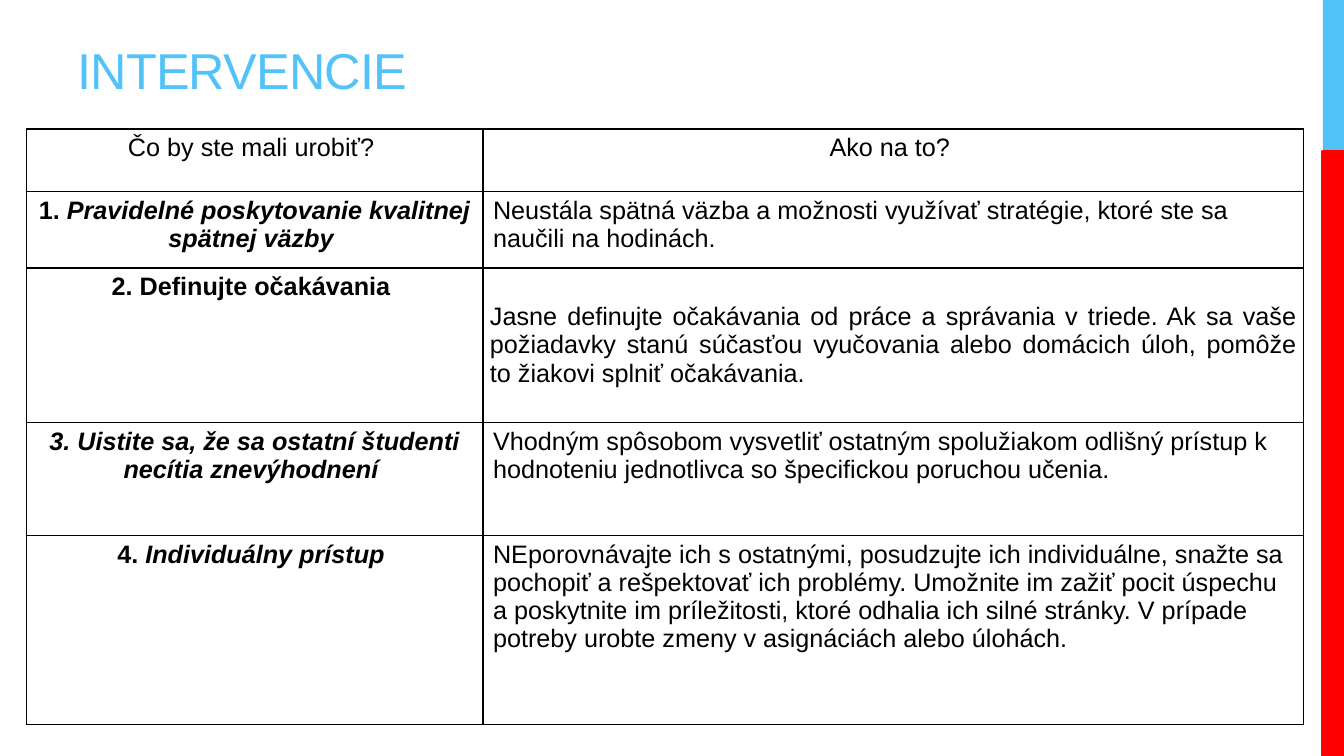
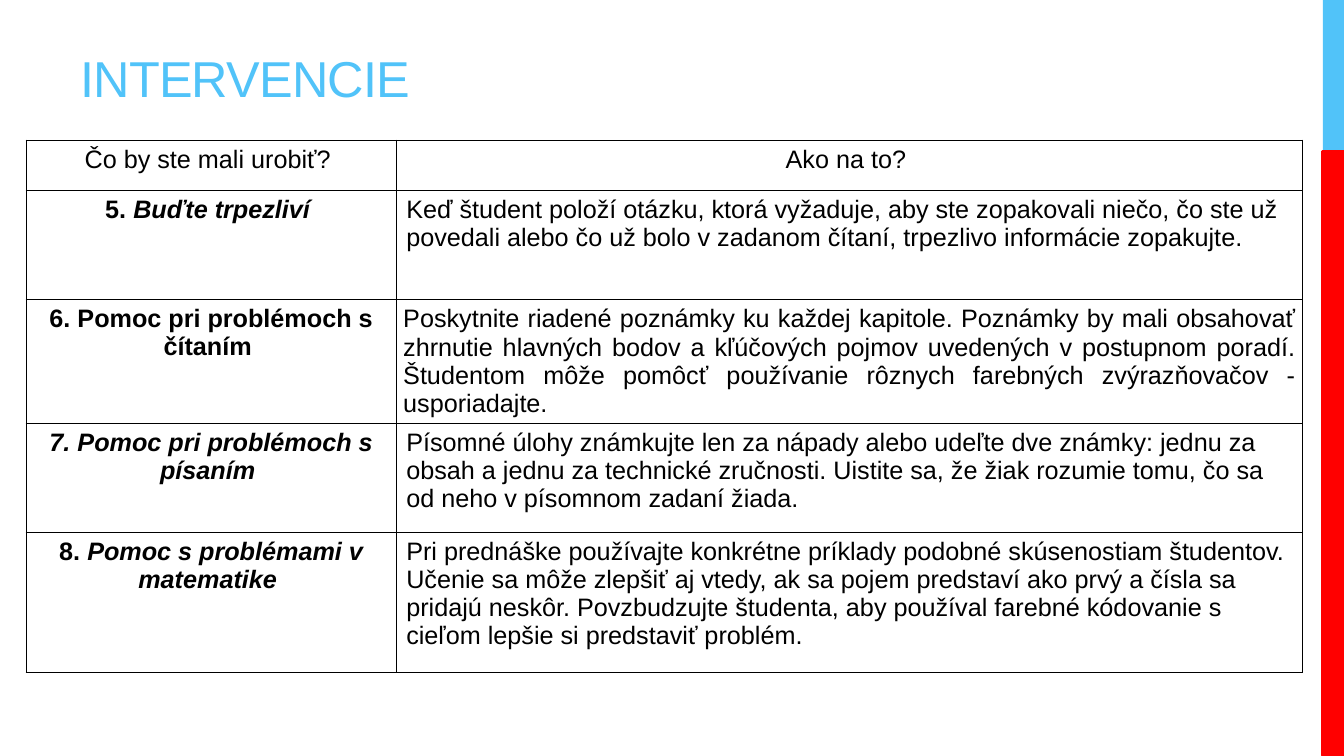
from lxml import etree
from pptx import Presentation
from pptx.dml.color import RGBColor
from pptx.enum import shapes, text
from pptx.oxml import ns
from pptx.util import Inches, Pt

HUES = {"sky": "51C3F9", "red": "FF0000", "ink": "000000", "page": "FFFFFF"}
FONT = "Arial"
WIDE, HIGH = 13.33, 7.5
HEADS = ("Čo by ste mali urobiť? ", "Ako na to? ")

FIRST = {
    "title": (0.67, 0.21, 8.44, 0.83),
    "grid": (0.26, 1.28),
    "cols": (4.53, 8.14),
    "rows": (0.62, 0.76, 1.53, 1.12, 1.88),
    "steps": [
        ([("1. ", False), ("Pravidelné poskytovanie kvalitnej spätnej väzby ", True)],
         "Neustála spätná väzba a možnosti využívať stratégie, ktoré ste sa naučili na hodinách."),
        ([("2. Definujte očakávania ", False)],
         "Jasne definujte očakávania od práce a správania v triede. Ak sa vaše požiadavky "
         "stanú súčasťou vyučovania alebo domácich úloh, pomôže to žiakovi splniť očakávania. "),
        ([("3. Uistite sa, že sa ostatní študenti necítia znevýhodnení ", True)],
         "Vhodným spôsobom vysvetliť ostatným spolužiakom odlišný prístup k hodnoteniu "
         "jednotlivca so špecifickou poruchou učenia."),
        ([("4. ", False), ("Individuálny prístup ", True)],
         "NEporovnávajte ich s ostatnými, posudzujte ich individuálne, snažte sa pochopiť "
         "a rešpektovať ich problémy. Umožnite im zažiť pocit úspechu a poskytnite im "
         "príležitosti, ktoré odhalia ich silné stránky. V prípade potreby urobte zmeny "
         "v asignáciách alebo úlohách."),
    ],
}

SECOND = {
    "title": (0.7, 0.21, 8.44, 0.91),
    "grid": (0.26, 1.39),
    "cols": (3.67, 8.99),
    "rows": (0.5, 1.08, 1.23, 1.08, 1.39),
    "steps": [
        ([("5. ", False), ("Buďte trpezliví ", True)],
         "Keď študent položí otázku, ktorá vyžaduje, aby ste zopakovali niečo, čo ste už "
         "povedali alebo čo už bolo v zadanom čítaní, trpezlivo informácie zopakujte."),
        ([("6. Pomoc pri problémoch s čítaním ", False)],
         "Poskytnite riadené poznámky ku každej kapitole. Poznámky by mali obsahovať "
         "zhrnutie hlavných bodov a kľúčových pojmov uvedených v postupnom poradí. "
         "Študentom môže pomôcť používanie rôznych farebných zvýrazňovačov - usporiadajte."),
        ([("7. Pomoc pri problémoch s písaním ", True)],
         "Písomné úlohy známkujte len za nápady alebo udeľte dve známky: jednu za obsah "
         "a jednu za technické zručnosti. Uistite sa, že žiak rozumie tomu, čo sa od neho "
         "v písomnom zadaní žiada."),
        ([("8. ", False), ("Pomoc s problémami v matematike ", True)],
         "Pri prednáške používajte konkrétne príklady podobné skúsenostiam študentov. "
         "Učenie sa môže zlepšiť aj vtedy, ak sa pojem predstaví ako prvý a čísla sa "
         "pridajú neskôr. Povzbudzujte študenta, aby používal farebné kódovanie s cieľom "
         "lepšie si predstaviť problém."),
    ],
}


def hue(name):
    return RGBColor.from_string(HUES[name])


def style(run, size, color, bold=False, slant=False):
    font = run.font
    font.name, font.size = FONT, Pt(size)
    font.bold, font.italic = bold, slant
    font.color.rgb = hue(color)


def band(slide, box, color):
    bar = slide.shapes.add_shape(shapes.MSO_SHAPE.RECTANGLE, *map(Inches, box))
    bar.shadow.inherit = False
    bar.fill.solid()
    bar.fill.fore_color.rgb = hue(color)
    bar.line.fill.background()
    return bar


def side(slide, left=13.12, split=1.5):
    width = WIDE - left
    band(slide, (left, 0, width, split), "sky")
    low = band(slide, (left, split, width, HIGH - split), "red")
    low.line.color.rgb = hue("red")
    low.line.width = Pt(2.25)


def title(slide, box):
    frame = slide.shapes.add_textbox(*map(Inches, box)).text_frame
    frame.word_wrap = True
    frame.vertical_anchor = text.MSO_ANCHOR.BOTTOM
    frame.text = "INTERVENCIE"
    run = frame.paragraphs[0].runs[0]
    style(run, 36, "sky")
    run.font._element.set("spc", "-60")


def border(cell):
    props = cell._tc.get_or_add_tcPr()
    for spot, edge in enumerate(("lnL", "lnR", "lnT", "lnB")):
        line = etree.Element(ns.qn(f"a:{edge}"), w=str(Pt(1)))
        fill = etree.SubElement(line, ns.qn("a:solidFill"))
        etree.SubElement(fill, ns.qn("a:srgbClr"), val=HUES["ink"])
        props.insert(spot, line)


def write(cell, parts, align, bold=False):
    cell.fill.solid()
    cell.fill.fore_color.rgb = hue("page")
    border(cell)
    para = cell.text_frame.paragraphs[0]
    para.alignment = align
    for words, slant in parts:
        run = para.add_run()
        run.text = words
        style(run, 18, "ink", bold, slant)


def center(cell):
    cell.vertical_anchor = text.MSO_ANCHOR.MIDDLE
    cell.margin_left = cell.margin_right = Inches(0.07)
    cell.margin_top = cell.margin_bottom = 0


def grid(slide, spot, cols, rows, steps):
    box = (*spot, sum(cols), sum(rows))
    table = slide.shapes.add_table(len(rows), len(cols), *map(Inches, box)).table
    for col, width in zip(table.columns, cols):
        col.width = Inches(width)
    for row, height in zip(table.rows, rows):
        row.height = Inches(height)
    align = text.PP_ALIGN
    for col, head in enumerate(HEADS):
        write(table.cell(0, col), [(head, False)], align.CENTER)
    for row, (label, advice) in enumerate(steps, 1):
        write(table.cell(row, 0), label, align.CENTER, True)
        cell = table.cell(row, 1)
        full = row == 2
        write(cell, [(advice, False)], align.JUSTIFY if full else align.LEFT)
        if full:
            center(cell)


def page(deck, data):
    slide = deck.slides.add_slide(deck.slide_layouts[6])
    side(slide)
    title(slide, data["title"])
    grid(slide, data["grid"], data["cols"], data["rows"], data["steps"])


def main():
    deck = Presentation()
    deck.slide_width, deck.slide_height = Inches(WIDE), Inches(HIGH)
    for data in (FIRST, SECOND):
        page(deck, data)
    deck.save("out.pptx")


if __name__ == "__main__":
    main()
